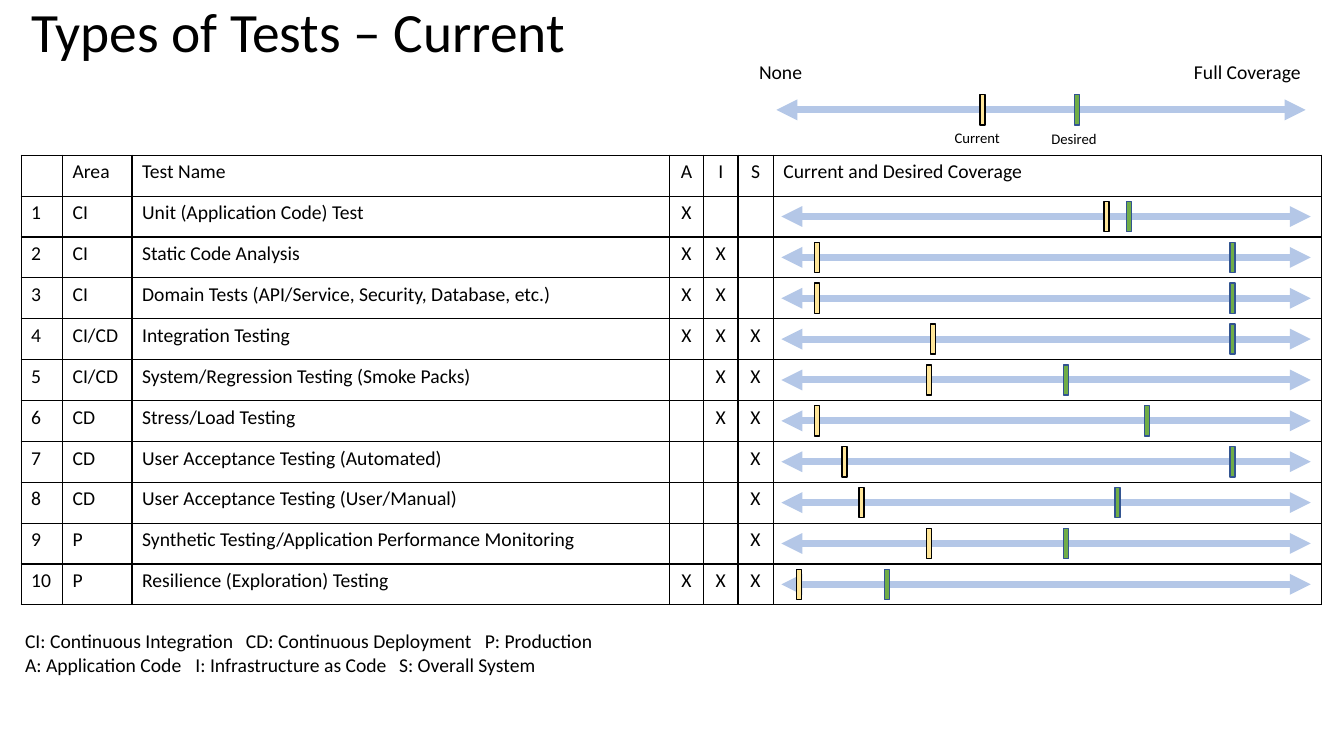
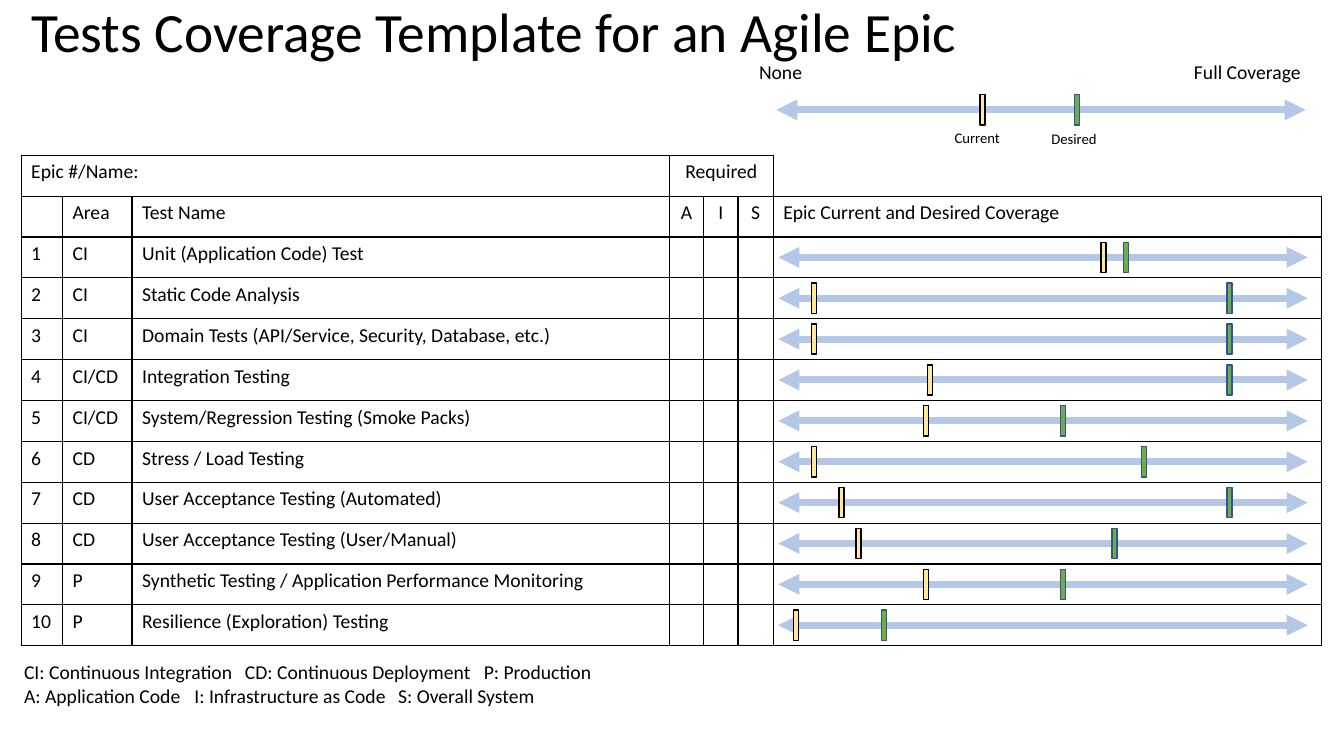
"""Build two test coverage slides with a shared title, key, table and footnote."""
from lxml.etree import SubElement
from pptx import Presentation
from pptx.dml.color import RGBColor
from pptx.enum.shapes import MSO_CONNECTOR as LINK, MSO_SHAPE as SHAPE
from pptx.enum.text import MSO_ANCHOR as ANCHOR, PP_ALIGN as ALIGN
from pptx.oxml.ns import qn
from pptx.util import Inches, Pt

rgb = RGBColor.from_string
BLACK, BLUE = "000000", "B4C7E7"
BARS = [("FFE699", BLACK), ("70AD47", "325491")]
FONT = "Calibri"
TOP, PITCH = 1.54, 4.46 / 11
WIDTHS = [0.41, 0.69, 5.33, 0.34, 0.34, 0.35, 5.44]
SPAN = 5.25
TESTS = [
    ("CI", "Unit (Application Code) Test", "A", 3.2, 3.42),
    ("CI", "Static Code Analysis", "AI", 0.33, 4.45),
    ("CI", "Domain Tests (API/Service, Security, Database, etc.)", "AI", 0.33, 4.45),
    ("CI/CD", "Integration Testing", "AIS", 1.48, 4.45),
    ("CI/CD", "System/Regression Testing (Smoke Packs)", "IS", 1.44, 2.8),
    ("CD", "Stress{}Load Testing", "IS", 0.33, 3.6),
    ("CD", "User Acceptance Testing (Automated)", "S", 0.6, 4.45),
    ("CD", "User Acceptance Testing (User/Manual)", "S", 0.77, 3.31),
    ("P", "Synthetic Testing{}Application Performance Monitoring", "S", 1.44, 2.8),
    ("P", "Resilience (Exploration) Testing", "AIS", 0.15, 1.02),
]
NOTES = [
    ("CI: Continuous Integration\tCD: Continuous Deployment\tP: Production", (2.19, 4.56)),
    ("A: Application Code\tI: Infrastructure as Code\tS: Overall System", (1.69, 3.71)),
]
LABELS = [
    ("None", 7.43, 0.55, 1, 14, ALIGN.LEFT),
    ("Full Coverage", 11.5, 0.55, 1.5, 14, ALIGN.RIGHT),
    ("Current", 9.37, 1.23, 0.68, 10.5, ALIGN.LEFT),
    ("Desired", 10.33, 1.24, 0.68, 10.5, ALIGN.LEFT),
]
SLIDES = [
    ("Types of Tests – Current", "Current and Desired Coverage", "/", False, 7.75, 0.15, 6.19),
    ("Tests Coverage Template for an Agile Epic", "Epic Current and Desired Coverage",
     " / ", True, 7.72, 0.14, 6.5),
]


def write(para, words, size=14, align=ALIGN.LEFT):
    """Add one styled run to a paragraph."""
    para.alignment = align
    run = para.add_run()
    run.text = words
    run.font.name, run.font.size = FONT, Pt(size)
    run.font.color.rgb = rgb(BLACK)


def track(slide, left, mid, spots):
    """Draw a double arrow with its current and desired bars."""
    line = slide.shapes.add_connector(
        LINK.STRAIGHT, Inches(left), Inches(mid), Inches(left + SPAN), Inches(mid))
    line.line.color.rgb, line.line.width = rgb(BLUE), Pt(5)
    for end in ("a:headEnd", "a:tailEnd"):
        SubElement(line.line._get_or_add_ln(), qn(end), type="triangle")
    SubElement(line._element.spPr, qn("a:effectLst"))
    for spot, (fill, edge) in zip(spots, BARS):
        bar = slide.shapes.add_shape(
            SHAPE.RECTANGLE, Inches(left + spot), Inches(mid - 0.15), Inches(0.05), Inches(0.3))
        bar.shadow.inherit = False
        bar.fill.solid()
        bar.fill.fore_color.rgb = rgb(fill)
        bar.line.color.rgb, bar.line.width = rgb(edge), Pt(1)


deck = Presentation()
deck.slide_width, deck.slide_height = Inches(13.33), Inches(7.5)

for title, head, slash, epic, left, note_x, note_y in SLIDES:
    slide = deck.slides.add_slide(deck.slide_layouts[6])
    rows = [["", "Area", "Test Name", "A", "I", "S", head]]
    for num, (area, name, marks, *_) in enumerate(TESTS, 1):
        ticks = ["X" if key in marks and not epic else "" for key in "AIS"]
        rows.append([str(num), area, name.format(slash), *ticks, ""])
    if epic:
        rows.insert(0, ["Epic #/Name:", "", "", "Required", "", "", ""])

    table = slide.shapes.add_table(
        len(rows), len(WIDTHS), Inches(0.21), Inches(TOP),
        Inches(sum(WIDTHS)), Inches(PITCH * len(rows))).table
    table.first_row = table.horz_banding = False
    for col, width in zip(table.columns, WIDTHS):
        col.width = Inches(width)
    for r, row in enumerate(rows):
        table.rows[r].height = Inches(PITCH)
        for c, words in enumerate(row):
            cell = table.cell(r, c)
            open_cell = epic and r == 0 and c == 6
            for side in ("lnL", "lnR", "lnT", "lnB"):
                edge = SubElement(cell._tc.get_or_add_tcPr(), qn("a:" + side), w=str(Pt(1)))
                if open_cell and side in ("lnR", "lnT"):
                    SubElement(edge, qn("a:noFill"))
                else:
                    SubElement(SubElement(edge, qn("a:solidFill")), qn("a:srgbClr"), val=BLACK)
            cell.fill.background()
            if words:
                align = ALIGN.CENTER if c in (3, 4, 5) else ALIGN.LEFT
                write(cell.text_frame.paragraphs[0], words, align=align)
    if epic:
        table.cell(0, 0).merge(table.cell(0, 2))
        table.cell(0, 3).merge(table.cell(0, 5))

    frame = slide.shapes.add_textbox(
        Inches(0.21), Inches(0.01), Inches(11.5), Inches(0.67)).text_frame
    frame.word_wrap, frame.vertical_anchor = True, ANCHOR.MIDDLE
    frame.paragraphs[0].line_spacing = 0.9
    write(frame.paragraphs[0], title, 39.6)

    track(slide, 7.7, 1.09, (2.02, 2.96))
    for words, x, y, width, size, align in LABELS:
        frame = slide.shapes.add_textbox(
            Inches(x), Inches(y), Inches(width), Inches(0.3)).text_frame
        frame.word_wrap = True
        write(frame.paragraphs[0], words, size, align)

    first = len(rows) - len(TESTS)
    for num, (*_, now, goal) in enumerate(TESTS, first):
        track(slide, left, TOP + PITCH * (num + 0.5), (now, goal))

    frame = slide.shapes.add_textbox(
        Inches(note_x), Inches(note_y), Inches(6), Inches(0.57)).text_frame
    frame.word_wrap = True
    for num, (words, stops) in enumerate(NOTES):
        para = frame.add_paragraph() if num else frame.paragraphs[0]
        write(para, words)
        tabs = SubElement(para._p.get_or_add_pPr(), qn("a:tabLst"))
        for stop in stops:
            SubElement(tabs, qn("a:tab"), pos=str(Inches(stop)), algn="l")

deck.save("out.pptx")
